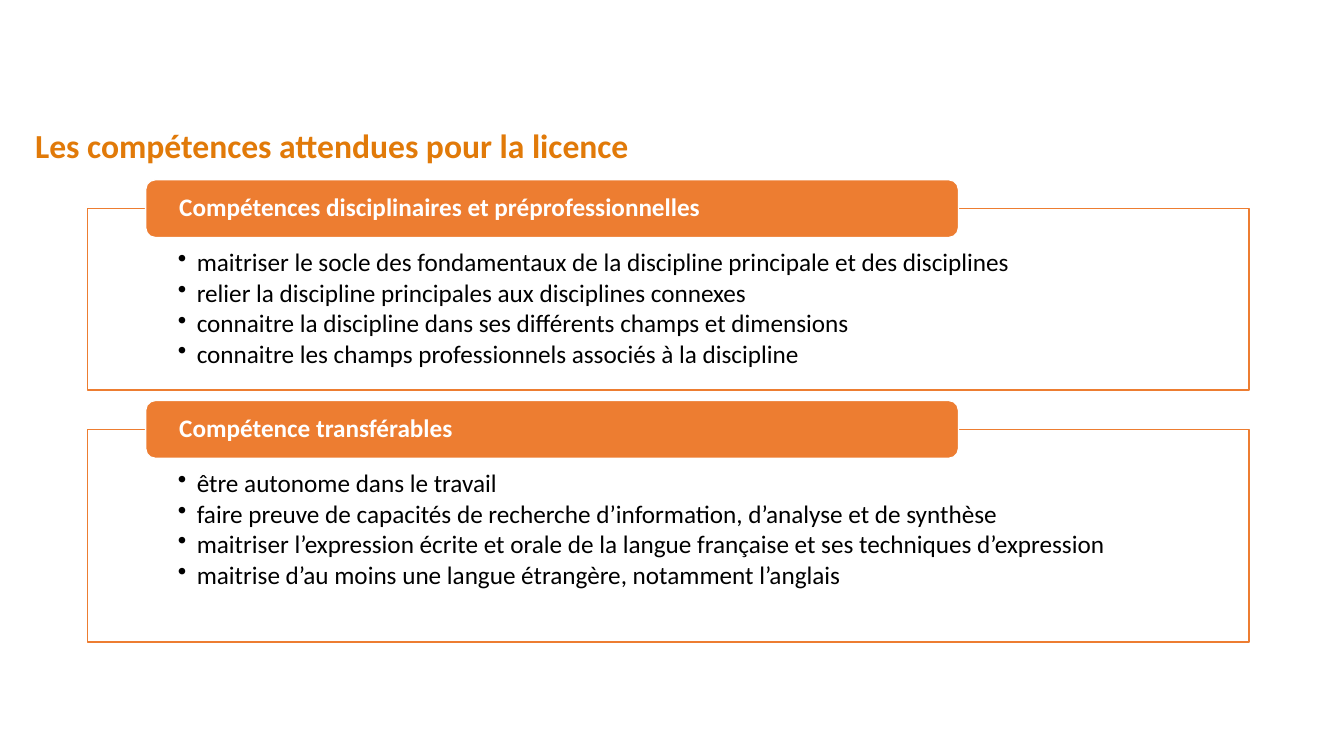
"""Build the slide on the skills expected for the licence."""
from lxml import etree
from pptx import Presentation
from pptx.dml.color import RGBColor
from pptx.enum.shapes import MSO_SHAPE
from pptx.enum.text import MSO_ANCHOR, MSO_AUTO_SIZE, PP_ALIGN
from pptx.oxml.ns import qn
from pptx.util import Pt

RECTANGLE = MSO_SHAPE.RECTANGLE
ROUNDED = MSO_SHAPE.ROUNDED_RECTANGLE
TOP = MSO_ANCHOR.TOP
MIDDLE = MSO_ANCHOR.MIDDLE
LEFT = PP_ALIGN.LEFT
FIT_SHAPE = MSO_AUTO_SIZE.SHAPE_TO_FIT_TEXT

AMBER = RGBColor(0xE1, 0x7A, 0x09)
ORANGE = RGBColor(0xED, 0x7D, 0x31)
WHITE = RGBColor(0xFF, 0xFF, 0xFF)
BLACK = RGBColor(0x00, 0x00, 0x00)

SECTIONS = [
    (149.04, 129.6, "Compétences disciplinaires et préprofessionnelles", [
        "maitriser le socle des fondamentaux de la discipline principale et des disciplines",
        "relier la discipline principales aux disciplines connexes",
        "connaitre la discipline dans ses différents champs et dimensions",
        "connaitre les champs professionnels associés à la discipline",
    ]),
    (306.72, 151.92, "Compétence transférables", [
        "être autonome dans le travail",
        "faire preuve de capacités de recherche d’information, d’analyse et de synthèse",
        "maitriser l’expression écrite et orale de la langue française et ses techniques d’expression",
        "maitrise d’au moins une langue étrangère, notamment l’anglais",
    ]),
]


class SkillsSlide:
    """Hold the text style and the slide being filled."""

    font = "Calibri"
    body_size = 18
    bullet_indent = 13.5

    def __init__(self, slide):
        self.shapes = slide.shapes

    def styled_run(self, paragraph, text, size, color, bold=False):
        """Add one styled run to a paragraph."""
        paragraph.alignment = LEFT
        run = paragraph.add_run()
        run.text = text
        run.font.name = self.font
        run.font.size = Pt(size)
        run.font.bold = bold
        run.font.color.rgb = color

    def title(self, text, left, top, width, height):
        """Add the slide title on a single line."""
        frame = self.shapes.add_textbox(Pt(left), Pt(top), Pt(width), Pt(height)).text_frame
        frame.word_wrap = False
        frame.auto_size = FIT_SHAPE
        self.styled_run(frame.paragraphs[0], text, 24, AMBER, True)

    def panel(self, kind, box, fill, line, margins, anchor):
        """Add an outlined shape and return its text frame."""
        shape = self.shapes.add_shape(kind, *map(Pt, box))
        shape.shadow.inherit = False
        shape.fill.solid()
        shape.fill.fore_color.rgb = fill
        shape.line.color.rgb = line
        shape.line.width = Pt(1)
        frame = shape.text_frame
        frame.word_wrap = True
        frame.vertical_anchor = anchor
        side, top, bottom = map(Pt, margins)
        frame.margin_left = frame.margin_right = side
        frame.margin_top, frame.margin_bottom = top, bottom
        return frame

    def bullet(self, paragraph, text):
        """Fill a paragraph as a bulleted item."""
        paragraph.line_spacing = 0.9
        paragraph.space_after = Pt(2.4)
        properties = paragraph._p.get_or_add_pPr()
        properties.set("marL", str(Pt(self.bullet_indent)))
        properties.set("indent", str(-Pt(self.bullet_indent)))
        etree.SubElement(properties, qn("a:buChar")).set("char", "•")
        self.styled_run(paragraph, text, self.body_size, BLACK)

    def section(self, top, height, heading, skills):
        """Add a box of skills with its heading over the top edge."""
        skills_frame = self.panel(RECTANGLE, (62.64, top, 829.44, height),
                                  WHITE, ORANGE, (64.4, 29.5, 10), TOP)
        for index, skill in enumerate(skills):
            paragraph = skills_frame.add_paragraph() if index else skills_frame.paragraphs[0]
            self.bullet(paragraph, skill)
        heading_frame = self.panel(ROUNDED, (104.1, top - 20.66, 580.6, 41.33),
                                   ORANGE, WHITE, (21.95, 0, 0), MIDDLE)
        heading_frame.paragraphs[0].line_spacing = 0.9
        self.styled_run(heading_frame.paragraphs[0], heading, self.body_size, WHITE, True)


def main():
    """Create the presentation and save it."""
    presentation = Presentation()
    presentation.slide_width = Pt(960)
    presentation.slide_height = Pt(540)
    slide = SkillsSlide(presentation.slides.add_slide(presentation.slide_layouts[6]))
    slide.title("Les compétences attendues pour la licence", 18, 85.68, 443.5, 36)
    for section in SECTIONS:
        slide.section(*section)
    presentation.save("out.pptx")


if __name__ == "__main__":
    main()
